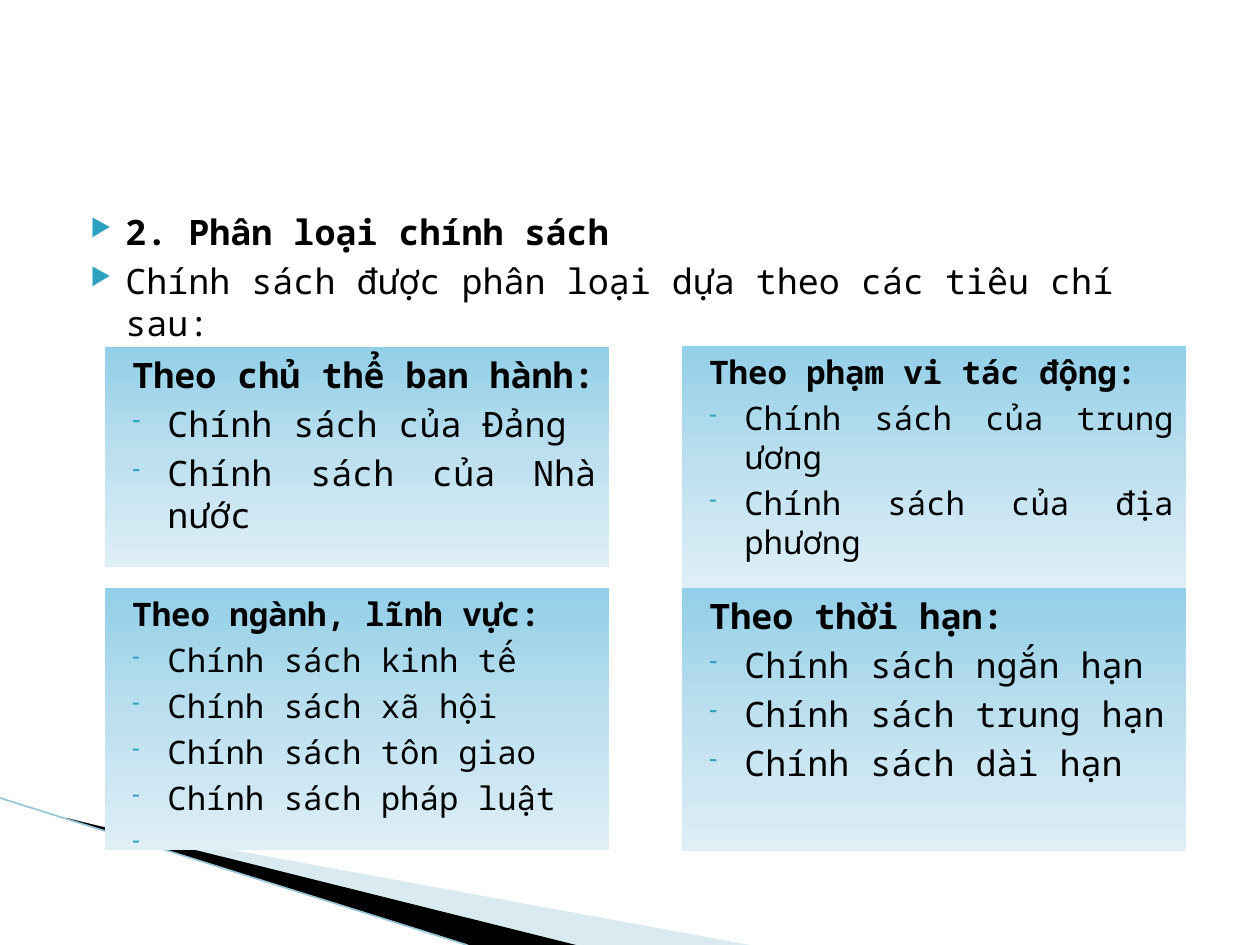
from dataclasses import dataclass
from lxml.etree import SubElement
from pptx import Presentation
from pptx.dml.color import RGBColor
from pptx.enum.shapes import MSO_CONNECTOR, MSO_SHAPE
from pptx.enum.text import MSO_ANCHOR, PP_ALIGN
from pptx.oxml.ns import qn
from pptx.util import Pt

SCALE = 914400 / 126
FONT = "Noto Sans Mono"
COLORS = {
    "text": "000000", "bullet": "2DA2BF", "black": "000000",
    "pale": "A0CBDC", "line": "97C5D8",
    "top": "92CFE8", "mid": "BDE0EF", "low": "DFEFF6",
}


@dataclass
class Card:
    left: int
    top: int
    height: int
    size: float
    lines: list[str]


@dataclass
class Wedge:
    points: list[tuple[int, int]]
    color: str
    alpha: int = 100


CARDS = [
    Card(105, 347, 220, 20, ["Theo chủ thể ban hành:", "Chính sách của Đảng",
                             "Chính sách của Nhà nước"]),
    Card(682, 346, 242, 18.5, ["Theo phạm vi tác động:", "Chính sách của trung ương",
                               "Chính sách của địa phương"]),
    # The last item shows only its dash
    Card(105, 588, 262, 18.5, ["Theo ngành, lĩnh vực:", "Chính sách kinh tế",
                               "Chính sách xã hội", "Chính sách tôn giao",
                               "Chính sách pháp luật", " "]),
    Card(682, 588, 263, 20, ["Theo thời hạn:", "Chính sách ngắn hạn",
                             "Chính sách trung hạn", "Chính sách dài hạn"]),
]
WEDGES = [
    Wedge([(69, 820), (750, 945), (575, 945), (69, 819)], "pale", 40),
    Wedge([(67, 818), (576, 945), (469, 945), (68, 819)], "black"),
]
INTRO = ["2. Phân loại chính sách",
         "Chính sách được phân loại dựa theo các tiêu chí sau:"]


def px(value: int) -> int:
    return round(value * SCALE)


def rgb(name: str) -> RGBColor:
    return RGBColor.from_string(COLORS[name])


def indent(para, margin: int, hang: int = 0, mark: str = "") -> None:
    props = para._p.get_or_add_pPr()
    props.set("marL", str(px(margin)))
    props.set("indent", str(-px(hang)))
    if mark:
        color = SubElement(props, qn("a:buClr"))
        SubElement(color, qn("a:srgbClr"), val=COLORS["bullet"])
        SubElement(props, qn("a:buSzPct"), val="68000")
        SubElement(props, qn("a:buChar"), char=mark)
    else:
        SubElement(props, qn("a:buNone"))


def write(frame, lines: list[str], size: float, mark: str, align, bare: bool) -> None:
    """Fill a frame whose first line is a bold heading; bare drops its bullet."""
    frame.word_wrap = True
    frame.vertical_anchor = MSO_ANCHOR.TOP
    frame.text = "\n".join(lines)
    for row, para in enumerate(frame.paragraphs):
        if bare and row == 0:
            indent(para, 15)
        else:
            indent(para, 50, 35, mark)
        para.alignment = align
        if row:
            para.space_before = Pt(4)
        for run in para.runs:
            run.font.name = FONT
            run.font.size = Pt(size)
            run.font.bold = row == 0
            run.font.color.rgb = rgb("text")


def shade(shape) -> None:
    """Fill from top to bottom with three even stops."""
    shape.fill.gradient()
    shape.fill.gradient_angle = 270
    stops = shape._element.spPr.find(qn("a:gradFill")).find(qn("a:gsLst"))
    for stop in list(stops):
        stops.remove(stop)
    for step, name in enumerate(("top", "mid", "low")):
        stop = SubElement(stops, qn("a:gs"), pos=str(step * 50000))
        SubElement(stop, qn("a:srgbClr"), val=COLORS[name])


def draw_wedge(shapes, wedge: Wedge) -> None:
    start, *rest = wedge.points
    pen = shapes.build_freeform(*start, scale=SCALE)
    pen.add_line_segments(rest)
    shape = pen.convert_to_shape()
    shape.shadow.inherit = False
    shape.fill.solid()
    shape.fill.fore_color.rgb = rgb(wedge.color)
    shape.line.fill.background()
    if wedge.alpha < 100:
        color = shape._element.spPr.find(qn("a:solidFill"))[0]
        SubElement(color, qn("a:alpha"), val=str(wedge.alpha * 1000))


def draw_card(shapes, card: Card) -> None:
    shape = shapes.add_shape(MSO_SHAPE.RECTANGLE, px(card.left), px(card.top),
                             px(504), px(card.height))
    shape.shadow.inherit = False
    shape.line.fill.background()
    shade(shape)
    write(shape.text_frame, card.lines, card.size, "-", PP_ALIGN.JUSTIFY, True)


def main() -> None:
    deck = Presentation()
    deck.slide_width, deck.slide_height = px(1260), px(945)
    shapes = deck.slides.add_slide(deck.slide_layouts[6]).shapes

    # Corner wedges and their edge line
    for wedge in WEDGES:
        draw_wedge(shapes, wedge)
    edge = shapes.add_connector(MSO_CONNECTOR.STRAIGHT, 0, px(798), px(467), px(945))
    edge.line.color.rgb = rgb("line")
    edge.line.width = Pt(0.95)
    SubElement(edge._element.spPr, qn("a:effectLst"))

    # Intro text
    intro = shapes.add_textbox(px(63), px(204), px(1134), px(624))
    write(intro.text_frame, INTRO, 20, "▶", PP_ALIGN.LEFT, False)

    # Four groups of policies
    for card in CARDS:
        draw_card(shapes, card)

    deck.save("out.pptx")


if __name__ == "__main__":
    main()
